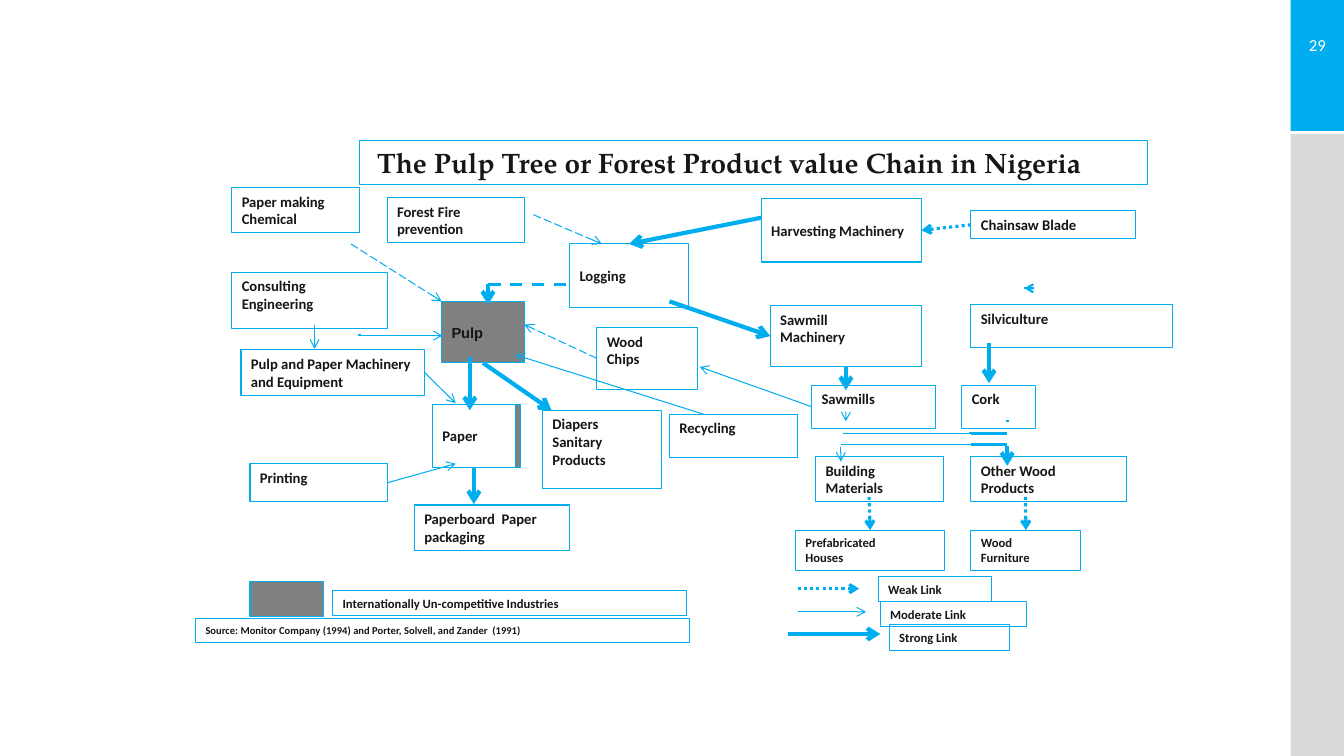
from lxml.etree import SubElement
from pptx import Presentation
from pptx.dml.color import RGBColor
from pptx.enum.dml import MSO_LINE
from pptx.enum.shapes import MSO_CONNECTOR, MSO_SHAPE
from pptx.enum.text import MSO_ANCHOR, MSO_AUTO_SIZE, PP_ALIGN
from pptx.oxml.ns import qn
from pptx.util import Inches, Pt

COLORS = {"blue": "00AEEF", "gray": "808080", "sidebar": "D9D9D9",
          "white": "FFFFFF", "text": "171616"}
CELL = Inches(0.1)  # the slide is a grid of 133.3 columns by 75 rows
TOP, LEFT, BOTTOM, RIGHT = range(4)

# name: (column, row, columns, rows, text, fill, size)
TOP_BOXES = {
    "chemical": (23, 18.6, 12.7, 4.5, "Paper making Chemical", "white", 10.5),
    "fire": (38.4, 19.6, 13.6, 4.5, "Forest Fire prevention", None, 10.5),
    "chainsaw": (96.3, 20.9, 16.3, 2.8, "Chainsaw Blade", "white", 10.5),
    "consulting": (23, 27, 15.4, 5.6, "Consulting Engineering", "white", 10.5),
    "equipment": (23.9, 34.7, 18.2, 4.5, "Pulp and Paper Machinery and Equipment", "white", 10.5),
    "printing": (24.8, 46, 13.6, 3.8, "Printing", None, 10.5),
    "chips": (59.2, 32.5, 10, 6.1, "Wood\nChips", "white", 10.5),
    "sawmill machinery": (76.4, 30.3, 15, 6.1, "Sawmill\nMachinery", "white", 10.5),
    "paperboard": (41.1, 50.1, 15.4, 4.5, "Paperboard  Paper packaging", "white", 10.5),
    "houses": (78.9, 52.6, 14.8, 4, "Prefabricated\nHouses", "white", 9),
    "furniture": (96.3, 52.6, 10.9, 4, "Wood\nFurniture", "white", 9),
    "silviculture": (96.3, 30.2, 20, 4.3, "Silviculture", "white", 10.5),
    "sawmills": (80.5, 38.2, 12.3, 4.3, "Sawmills", "white", 10.5),
    "cork": (95.4, 38.2, 7.3, 4.3, "Cork", "white", 10.5),
    "building": (80.9, 45.3, 12.7, 4.5, "Building Materials", "white", 10.5),
    "other wood": (96.3, 45.3, 15.4, 4.5, "Other Wood\nProducts", "white", 10.5),
    "diapers": (53.8, 40.7, 11.8, 7.8, "Diapers\nSanitary Products", None, 10.5),
    "recycling": (66.4, 41.1, 12.7, 4.3, "Recycling", None, 10.5),
    "uncompetitive": (33, 58.6, 35.1, 2.5, "Internationally Un-competitive Industries", None, 9),
    "weak": (87.1, 57.2, 11.2, 2.5, "Weak Link", None, 9),
    "moderate": (87.3, 59.7, 14.5, 2.5, "Moderate Link", None, 9),
    "strong": (88.2, 62, 11.9, 2.5, "Strong Link", None, 9),
    "source": (19.4, 61.4, 49, 2.3,
               "Source: Monitor Company (1994) and Porter, Solvell, and Zander  (1991)", None, 7.5),
}
MIDDLE_BOXES = {
    "harvesting": (75.5, 19.7, 15.9, 6.3, "Harvesting Machinery", "white", 10.5),
    "pulp": (43.8, 29.9, 8.2, 6.1, "Pulp", "gray", 10.5),
    "paper": (42.9, 40.1, 8.2, 6.3, "Paper", "white", 10.5),
    "logging": (56.5, 24.2, 11.8, 6.3, "Logging", "white", 10.5),
}

# style: (width, dash, arrowhead)
LINK_STYLES = {
    "strong": (3, None, True),
    "moderate": (0.75, None, True),
    "weak": (2.25, MSO_LINE.ROUND_DOT, True),
    "dashed": (0.75, MSO_LINE.LONG_DASH, True),
    "dashed bar": (2.25, MSO_LINE.DASH, False),
    "bar": (2.25, None, False),
    "thin bar": (0.5, None, False),
    "tip": (1.5, None, True),
}
# each end is (column, row) or (box name, side)
LINKS = {
    "strong": [
        (("paper", BOTTOM), (47, 50)), ((46.6, 35.4), (46.6, 40.7)),
        ((47.9, 36), (54.7, 40.7)), ((48.4, 28.2), (48.4, 30.2)),
        ((75.5, 21.6), ("logging", TOP)), (("sawmill machinery", BOTTOM), (83.9, 38.7)),
        ((98.1, 34), (98.1, 38)), ((99.9, 44.2), (99.9, 46.2)),
        ((66.4, 29.9), ("sawmill machinery", LEFT)), ((78.2, 62.9), (87.3, 62.9)),
    ],
    "moderate": [
        (("printing", RIGHT), (45.2, 46)), (("equipment", RIGHT), (45.2, 40)),
        ((69.8, 41.1), (51.1, 35.2)), ((83.4, 44.3), (83.4, 45.8)),
        ((83.9, 41.7), (83.9, 41.8)), ((35.7, 33.3), (43.9, 33.3)),
        ((31.2, 32.2), (31.2, 34.6)), (("sawmills", LEFT), (69.4, 36.4)),
        ((79.1, 60.7), (85.9, 60.7)),
    ],
    "weak": [
        (("chainsaw", LEFT), ("harvesting", RIGHT)), ((86.2, 49.3), ("houses", TOP)),
        ((101.7, 49.3), ("furniture", TOP)), ((79.1, 58.4), (85.2, 58.4)),
    ],
    "dashed": [
        (("chips", LEFT), (52, 32.2)), ((34.8, 24.2), (43.8, 29.9)),
        ((52.9, 21.3), (59.7, 24.2)),
    ],
    "dashed bar": [((48.4, 28.2), (56.5, 28.2))],
    "bar": [
        ((101.7, 28.5), (101.7, 28.7)), ((96.3, 43), (99.9, 43)),
        ((96.3, 44.1), (99.9, 44.1)), ((99.9, 41.7), (99.9, 41.9)),
        ((96.3, 42.9), (96.3, 43)), ((35.7, 33.1), (35.7, 33.3)),
    ],
    "thin bar": [((83.4, 44.1), (96.4, 44.1)), ((83.6, 43), (96.6, 43))],
    "tip": [((101.7, 28.6), (101.6, 28.6))],
}


def color(name):
    return RGBColor.from_string(COLORS[name])


def cells(*counts):
    return [round(count * CELL) for count in counts]


def format_text(text_frame, size, font_name="Calibri", color_name="text", bold=True,
                anchor=MSO_ANCHOR.TOP, alignment=PP_ALIGN.LEFT):
    text_frame.word_wrap = True
    text_frame.auto_size = MSO_AUTO_SIZE.NONE
    text_frame.vertical_anchor = anchor
    for paragraph in text_frame.paragraphs:
        paragraph.alignment = alignment
        for run in paragraph.runs:
            run.font.name = font_name
            run.font.size = Pt(size)
            run.font.bold = bold
            run.font.color.rgb = color(color_name)


def outline(shape):
    shape.line.color.rgb = color("blue")
    shape.line.width = Pt(0.75)


def add_panel(slide, area, fill, outlined=True):
    shape = slide.shapes.add_shape(MSO_SHAPE.RECTANGLE, *cells(*area))
    shape.shadow.inherit = False
    if fill:
        shape.fill.solid()
        shape.fill.fore_color.rgb = color(fill)
    else:
        shape.fill.background()
    if outlined:
        outline(shape)
    else:
        shape.line.fill.background()
    return shape


def add_box(slide, box, anchor):
    *area, text, fill, size = box
    shape = add_panel(slide, area, fill)
    shape.text_frame.text = text
    format_text(shape.text_frame, size, "Arial" if text == "Pulp" else "Calibri", anchor=anchor)
    return shape


def add_link(slide, boxes, start, end, style):
    """Draw a link, joining each end that names a box to that box's side."""
    width, dash, arrowhead = LINK_STYLES[style]
    points = [(0, 0) if point[0] in boxes else point for point in (start, end)]
    link = slide.shapes.add_connector(MSO_CONNECTOR.STRAIGHT, *cells(*points[0], *points[1]))
    if start[0] in boxes:
        link.begin_connect(boxes[start[0]], start[1])
    if end[0] in boxes:
        link.end_connect(boxes[end[0]], end[1])
    link.line.color.rgb = color("blue")
    link.line.width = Pt(width)
    if dash:
        link.line.dash_style = dash
    if arrowhead:
        SubElement(link.line._get_or_add_ln(), qn("a:tailEnd"), type="arrow")
    SubElement(link._element.spPr, qn("a:effectLst"))


def add_title(slide):
    title = slide.shapes.title
    title.left, title.top, title.width, title.height = cells(35.7, 13.9, 78.1, 4.4)
    outline(title)
    title.text_frame.text = "The Pulp Tree or Forest Product value Chain in Nigeria"
    title.text_frame.margin_left = Inches(0.17)
    format_text(title.text_frame, 20, "TeX Gyre Pagella")


def add_sidebar(slide):
    add_panel(slide, (128, 0, 5.33, 13), "blue", outlined=False)
    add_panel(slide, (128, 13.3, 5.33, 61.7), "sidebar", outlined=False)
    number = slide.shapes.add_textbox(*cells(127.4, 2.9, 6.5, 3))
    number.text_frame.text = "29"
    format_text(number.text_frame, 12, color_name="white", bold=False,
                anchor=MSO_ANCHOR.MIDDLE, alignment=PP_ALIGN.CENTER)


def main():
    presentation = Presentation()
    presentation.slide_width, presentation.slide_height = Inches(13.33), Inches(7.5)
    slide = presentation.slides.add_slide(presentation.slide_layouts[5])
    add_sidebar(slide)
    add_title(slide)
    add_panel(slide, (47.5, 40.1, 4.1, 6.3), "gray")
    add_panel(slide, (24.8, 57.7, 7.3, 3.5), "gray")
    boxes = {}
    for group, anchor in ((TOP_BOXES, MSO_ANCHOR.TOP), (MIDDLE_BOXES, MSO_ANCHOR.MIDDLE)):
        for name, box in group.items():
            boxes[name] = add_box(slide, box, anchor)
    for style, links in LINKS.items():
        for start, end in links:
            add_link(slide, boxes, start, end, style)
    presentation.save("out.pptx")


if __name__ == "__main__":
    main()
